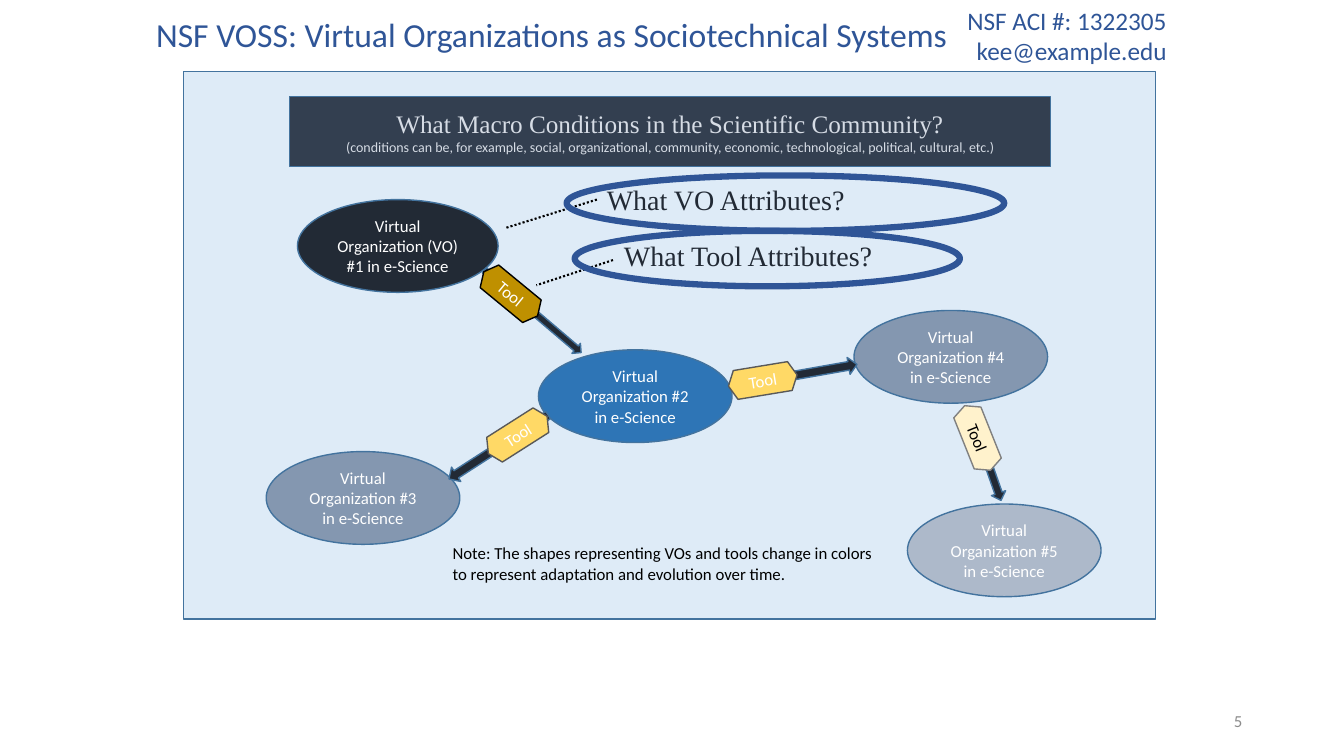
from lxml import etree
from pptx import Presentation
from pptx import util as u
from pptx.dml.color import RGBColor
from pptx.enum import dml, shapes, text
from pptx.oxml.ns import qn

# Lengths are grid cells: 133.3 columns by 75 rows on the slide.
CELL = u.Inches(0.1)
SLIDE = (0, 0, 133.3, 75)
PANEL = (18.2, 7.1, 96.4, 54.3)

SANS, SERIF = "Calibri", "Times New Roman"
WHITE, BLACK = "FFFFFF", "000000"
NAVY, BLUE, OUTLINE = "222A35", "2F5597", "43739E"
SLATE, GOLD = "8497B0", "FFD966"
SHAPE, ALIGN = shapes.MSO_SHAPE, text.PP_ALIGN

# centre column, centre row, width, fill, label
ORGANIZATIONS = [
    (21.25, 17.3, 19.9, NAVY, "Virtual Organization (VO) #1 in e-Science"),
    (44.8, 32.2, 19.2, "2E75B6", "Virtual Organization #2 in e-Science"),
    (17.8, 42.3, 19.2, SLATE, "Virtual Organization #3 in e-Science"),
    (76.1, 28.3, 19.2, SLATE, "Virtual Organization #4 in e-Science"),
    (81.4, 47.5, 19.2, "ADB9CA", "Virtual Organization #5 in e-Science"),
]
# centre column, centre row, width, length, rotation
ARROWS = [
    (34.65, 23.8, 1.3, 12.6, 310.4),
    (60.55, 30.15, 1.7, 12.7, 260),
    (31.25, 37.25, 1.7, 11.7, 57.2),
    (79.55, 38.15, 1.5, 9.3, 340.7),
]
# centre column, centre row, rotation, fill, line, text colour
TOOLS = [
    (32.45, 22.05, 39.4, "BF9000", BLACK, WHITE),
    (57.45, 30.65, 350.7, GOLD, "595959", WHITE),
    (33.15, 36.05, 327.5, GOLD, "595959", WHITE),
    (78.75, 36.35, 68.2, "FFF2CC", "808080", BLACK),
]
# text, text box, ellipse, dotted line start and end
QUESTIONS = [
    ("What VO Attributes?", (41, 10.5, 25.6, 4.4), (38, 10.3, 43.4, 5.5),
     (41, 12.7), (32, 15.5)),
    ("What Tool Attributes?", (42.7, 16.1, 26.8, 4.4), (38.8, 15.8, 38.2, 5.5),
     (42.6, 18.7), (35, 21.2)),
]


def color(hex_string):
    return RGBColor.from_string(hex_string)


def place(box, left, top, *size):
    """Turn cells counted from the corner of box into slide lengths."""
    cells = (box[0] + left, box[1] + top, *size)
    return [round(cell * CELL) for cell in cells]


def centred(column, row, width, height):
    return column - width / 2, row - height / 2, width, height


def add_text(shape, content, size=12, font=SANS, fill=WHITE, align=ALIGN.CENTER):
    """Write content as the next paragraph of shape."""
    frame = shape.text_frame
    paragraph = frame.add_paragraph() if frame.text else frame.paragraphs[0]
    paragraph.alignment = align
    run = paragraph.add_run()
    run.text = content
    run.font.size = u.Pt(size)
    run.font.name = font
    run.font.color.rgb = color(fill)


def add_box(slide, box, area, wrap=False, anchor=text.MSO_ANCHOR.TOP):
    shape = slide.shapes.add_textbox(*place(box, *area))
    shape.text_frame.word_wrap = wrap
    shape.text_frame.vertical_anchor = anchor
    return shape


def add_figure(slide, box, kind, area, fill=None, line=OUTLINE, weight=1, rotation=0):
    shape = slide.shapes.add_shape(kind, *place(box, *area))
    shape.shadow.inherit = False
    shape.rotation = rotation
    if fill:
        shape.fill.solid()
        shape.fill.fore_color.rgb = color(fill)
    else:
        shape.fill.background()
    shape.line.color.rgb = color(line)
    shape.line.width = u.Pt(weight)
    shape.text_frame.vertical_anchor = text.MSO_ANCHOR.MIDDLE
    return shape


def add_dotted_line(slide, box, start, end):
    line = slide.shapes.add_connector(
        shapes.MSO_CONNECTOR.STRAIGHT, *place(box, *start), *place(box, *end))
    line.line.color.rgb = color(BLACK)
    line.line.width = u.Pt(1.5)
    line.line.dash_style = dml.MSO_LINE.ROUND_DOT
    etree.SubElement(line._element.spPr, qn("a:effectLst"))


def add_heading(slide, box):
    title = add_box(slide, box, (14.5, 0.9, 81.2, 5))
    add_text(title, "NSF VOSS: Virtual Organizations as Sociotechnical Systems",
             size=24, fill=BLUE, align=ALIGN.LEFT)
    contact = add_box(slide, box, (94.8, 0, 21.9, 7.1))
    for content in ("NSF ACI #: 1322305", "kee@example.edu"):
        add_text(contact, content, size=18, fill=BLUE, align=ALIGN.RIGHT)


def add_conditions(slide, box):
    banner = add_figure(slide, box, SHAPE.RECTANGLE, (10.5, 2.5, 75.5, 6.9), "333F50")
    add_text(banner, "What Macro Conditions in the Scientific Community?",
             size=18, font=SERIF, fill="D6DCE5")
    add_text(banner, "(conditions can be, for example, social, organizational, community, "
             "economic, technological, political, cultural, etc.)", size=10, fill="D6DCE5")


def add_network(slide, box):
    """Draw the organizations, the arrows between them and their tools."""
    for column, row, width, fill, label in ORGANIZATIONS:
        area = centred(column, row, width, 9.2)
        add_text(add_figure(slide, box, SHAPE.OVAL, area, fill), label)
    for *area, rotation in ARROWS:
        add_figure(slide, box, SHAPE.DOWN_ARROW, centred(*area), NAVY, rotation=rotation)
    for column, row, rotation, fill, line, text_fill in TOOLS:
        tool = add_figure(slide, box, SHAPE.HEXAGON, centred(column, row, 6.9, 2.9),
                          fill, line, rotation=rotation)
        tool.text_frame.word_wrap = False
        add_text(tool, "Tool", fill=text_fill)


def add_questions(slide, box):
    for content, area, ellipse, start, end in QUESTIONS:
        add_text(add_box(slide, box, area), content,
                 size=20, font=SERIF, fill=NAVY, align=ALIGN.LEFT)
        add_dotted_line(slide, box, start, end)
        add_figure(slide, box, SHAPE.OVAL, ellipse, line=BLUE, weight=4.5)


def add_note(slide, box):
    note = add_box(slide, box, (25.7, 46.3, 44.5, 5))
    for content in ("Note: The shapes representing VOs and tools change in colors",
                    "to represent adaptation and evolution over time."):
        add_text(note, content, fill=BLACK, align=ALIGN.LEFT)


def add_page_number(slide, box):
    number = add_box(slide, box, (94.2, 69.5, 30, 4), True, text.MSO_ANCHOR.MIDDLE)
    add_text(number, "5", fill="8C8C8C", align=ALIGN.RIGHT)


def main():
    presentation = Presentation()
    presentation.slide_width, presentation.slide_height = place(SLIDE, *SLIDE[2:])
    slide = presentation.slides.add_slide(presentation.slide_layouts[6])
    add_heading(slide, SLIDE)
    add_figure(slide, SLIDE, SHAPE.RECTANGLE, PANEL, "DEEBF7")
    for add_part in (add_conditions, add_network, add_questions, add_note):
        add_part(slide, PANEL)
    add_page_number(slide, SLIDE)
    presentation.save("out.pptx")


if __name__ == "__main__":
    main()
